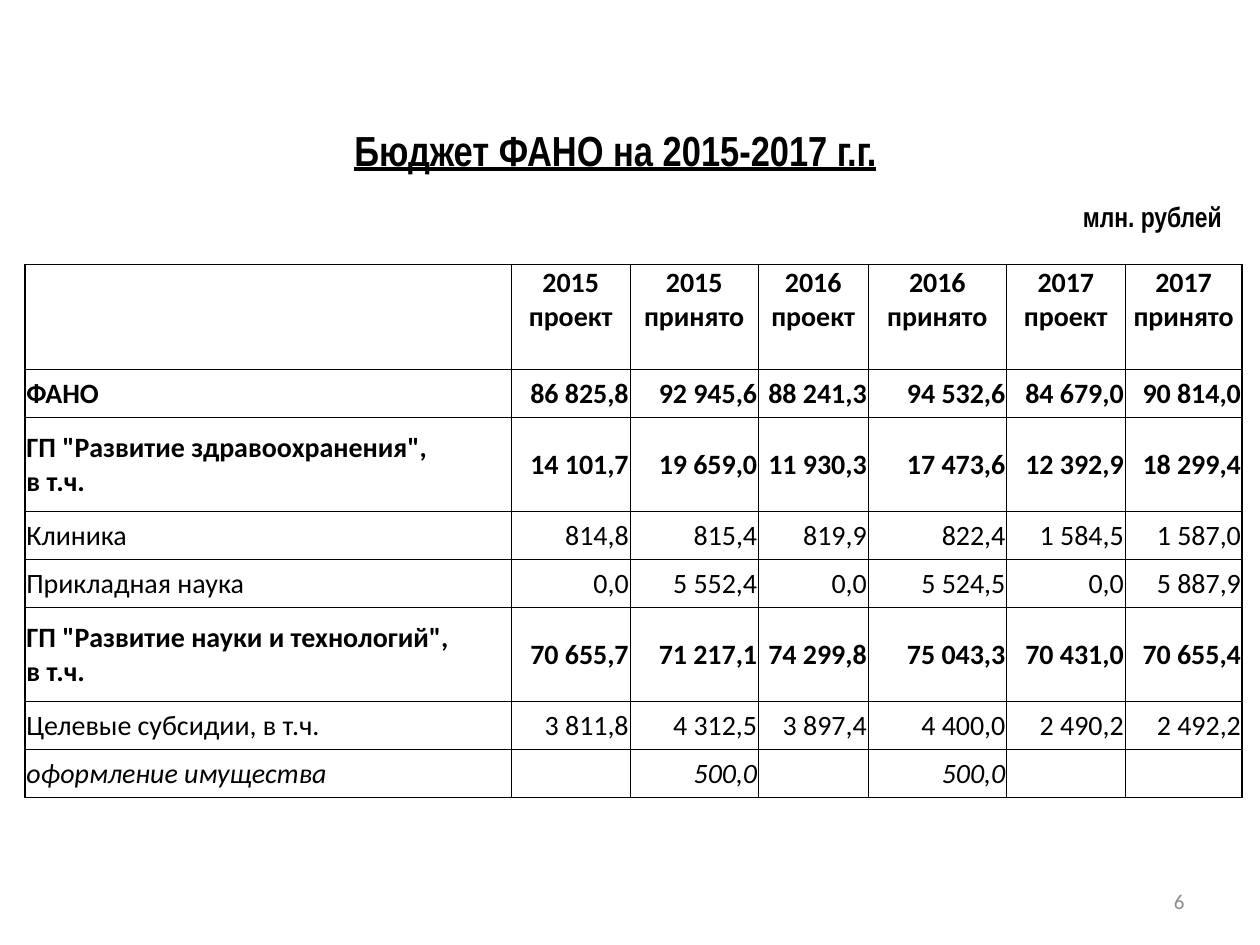
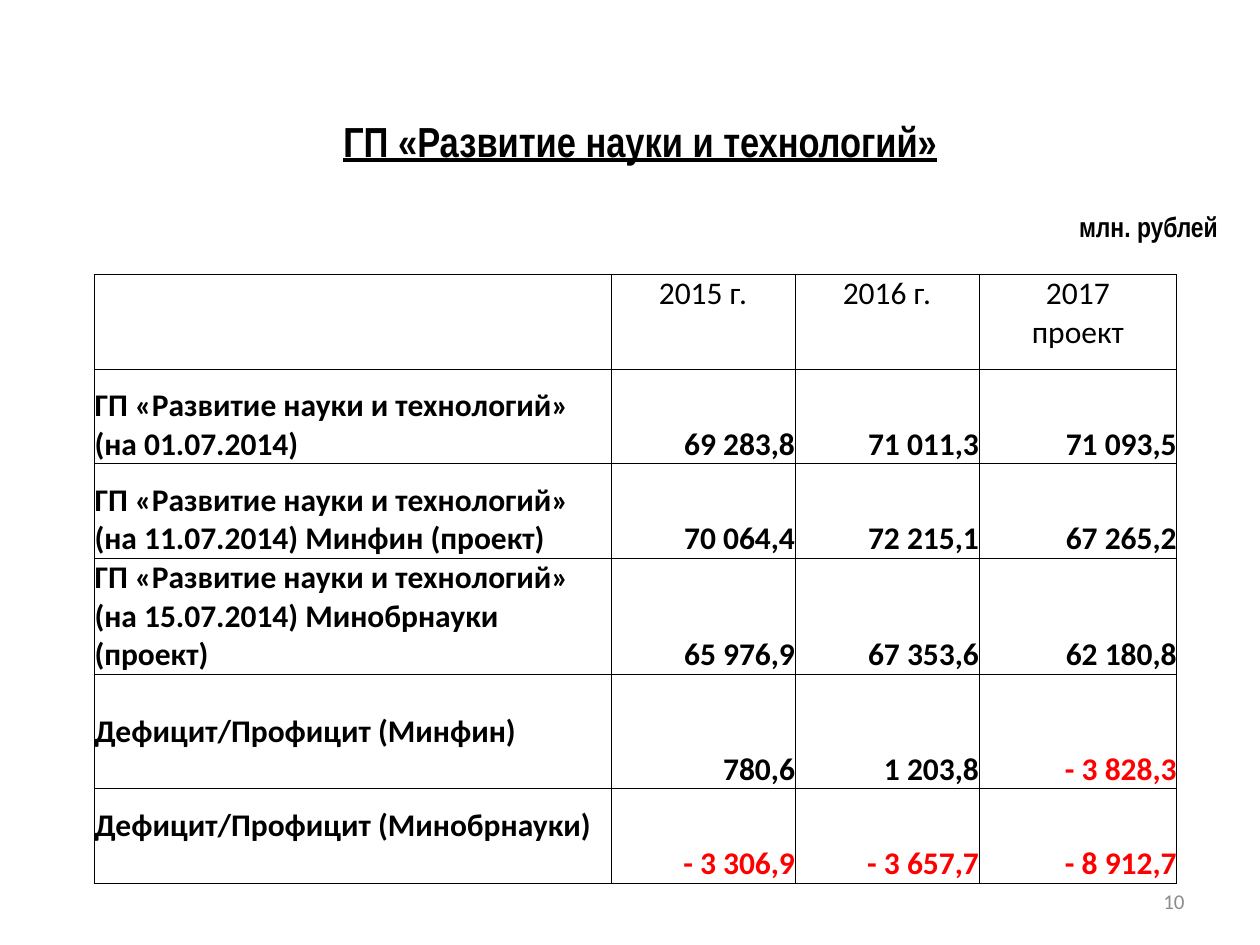
from dataclasses import dataclass

from lxml import etree
from pptx import Presentation
from pptx.dml.color import RGBColor
from pptx.enum.text import MSO_ANCHOR, MSO_AUTO_SIZE, PP_ALIGN
from pptx.oxml.ns import qn
from pptx.util import Emu, Inches, Pt

LEFT, CENTER, RIGHT, JUSTIFY = PP_ALIGN.LEFT, PP_ALIGN.CENTER, PP_ALIGN.RIGHT, PP_ALIGN.JUSTIFY
TOP, MIDDLE, BOTTOM = MSO_ANCHOR.TOP, MSO_ANCHOR.MIDDLE, MSO_ANCHOR.BOTTOM

SLIDE_W, SLIDE_H = Inches(10), Inches(7.5)
GRID_COLUMNS, GRID_ROWS = 100, 75
BLACK, RED, GRAY = "000000", "FF0000", "8C8C8C"
HEADING_FONT, BODY_FONT = "Arial Narrow", "Calibri"
HAIRLINE = 0.5


@dataclass(frozen=True)
class Frame:
    """A place on the slide, in grid columns and rows."""
    left: float
    top: float
    width: float
    height: float

    def emu(self) -> tuple[Emu, Emu, Emu, Emu]:
        return columns(self.left), rows(self.top), columns(self.width), rows(self.height)


@dataclass(frozen=True)
class Line:
    """One table row; label_lift raises the label above the row's bottom."""
    label: str
    figures: tuple[str, ...]
    height: float
    bold: bool = False
    italic: bool = False
    label_lift: float = 0


@dataclass(frozen=True)
class BudgetTable:
    left: float
    top: float
    column_widths: tuple[float, ...]
    lines: tuple[Line, ...]
    size: int
    margin: float
    label_align: PP_ALIGN
    anchor: MSO_ANCHOR
    outline: float


@dataclass(frozen=True)
class BudgetSlide:
    title: str
    title_frame: Frame
    unit_frame: Frame
    number: str
    table: BudgetTable


NUMBER_FRAME = Frame(71.7, 69.5, 23.3, 4)

AGENCY_BUDGET = BudgetSlide(
    "Бюджет ФАНО на 2015-2017 г.г.",
    Frame(13.8, 9.9, 70.1, 4.7),
    Frame(83.9, 15.5, 15.1, 3.8),
    "6",
    BudgetTable(
        2, 21, (38.6, 9.4, 10.2, 8.7, 11, 9.4, 9.3),
        (
            Line("", ("2015 проект", "2015 принято", "2016 проект", "2016 принято",
                      "2017 проект", "2017 принято"), 8.3, bold=True),
            Line("ФАНО", ("86 825,8", "92 945,6", "88 241,3", "94 532,6",
                          "84 679,0", "90 814,0"), 3.8, bold=True),
            Line('ГП "Развитие здравоохранения",\nв т.ч.',
                 ("14 101,7", "19 659,0", "11 930,3", "17 473,6", "12 392,9", "18 299,4"),
                 7.5, bold=True),
            Line("Клиника", ("814,8", "815,4", "819,9", "822,4", "1 584,5", "1 587,0"), 3.8),
            Line("Прикладная наука",
                 ("0,0", "5 552,4", "0,0", "5 524,5", "0,0", "5 887,9"), 3.8),
            Line('ГП "Развитие науки и технологий",\nв т.ч.',
                 ("70 655,7", "71 217,1", "74 299,8", "75 043,3", "70 431,0", "70 655,4"),
                 7.5, bold=True),
            Line("Целевые субсидии, в т.ч.",
                 ("3 811,8", "4 312,5", "3 897,4", "4 400,0", "2 490,2", "2 492,2"), 3.8),
            Line("оформление имущества", ("", "500,0", "", "500,0", "", ""), 3.8, italic=True),
        ),
        size=16, margin=0.1, label_align=JUSTIFY, anchor=MIDDLE, outline=1,
    ),
)

PROGRAMME_BUDGET = BudgetSlide(
    "ГП «Развитие науки и технологий»",
    Frame(1.6, 8.4, 98.4, 6.3),
    Frame(83.6, 16.3, 15.1, 3.8),
    "10",
    BudgetTable(
        7.5, 21.8, (41, 14.6, 14.6, 15.7),
        (
            Line("", ("2015 г.", "2016 г.", "2017\nпроект"), 7.5),
            Line("ГП «Развитие науки и технологий» (на 01.07.2014)",
                 ("69 283,8", "71 011,3", "71 093,5"), 7.5, bold=True),
            Line("ГП «Развитие науки и технологий» (на 11.07.2014) Минфин (проект)",
                 ("70 064,4", "72 215,1", "67 265,2"), 7.5, bold=True),
            Line("ГП «Развитие науки и технологий» (на 15.07.2014) Минобрнауки (проект)",
                 ("65 976,9", "67 353,6", "62 180,8"), 9.2, bold=True),
            Line("Дефицит/Профицит (Минфин)",
                 ("780,6", "1 203,8", "- 3 828,3"), 9.1, bold=True, label_lift=3),
            Line("Дефицит/Профицит (Минобрнауки)",
                 ("- 3 306,9", "- 3 657,7", "- 8 912,7"), 7.5, bold=True, label_lift=3),
        ),
        size=18, margin=0, label_align=LEFT, anchor=BOTTOM, outline=HAIRLINE,
    ),
)


def columns(count: float) -> Emu:
    return Emu(round(SLIDE_W * count / GRID_COLUMNS))


def rows(count: float) -> Emu:
    return Emu(round(SLIDE_H * count / GRID_ROWS))


def color(value: str) -> RGBColor:
    return RGBColor.from_string(value)


def write(text_frame, text: str, *, size: float, font: str = BODY_FONT, fill: str = BLACK,
          bold: bool = False, italic: bool = False, underline: bool = False,
          align: PP_ALIGN = LEFT, spacing: float = 1) -> None:
    text_frame.word_wrap = True
    for index, words in enumerate(text.split("\n")):
        paragraph = text_frame.add_paragraph() if index else text_frame.paragraphs[0]
        paragraph.alignment = align
        paragraph.line_spacing = spacing
        if not words:
            continue
        run = paragraph.add_run()
        run.text = words
        run.font.name, run.font.size = font, Pt(size)
        run.font.bold, run.font.italic, run.font.underline = bold, italic, underline
        run.font.color.rgb = color(fill)


def add_label(slide, frame: Frame, text: str, **text_format) -> None:
    text_frame = slide.shapes.add_textbox(*frame.emu()).text_frame
    text_frame.vertical_anchor = MIDDLE
    write(text_frame, text, **text_format)


def place_title(slide, frame: Frame, text: str) -> None:
    title = slide.shapes.title
    title.left, title.top, title.width, title.height = frame.emu()
    title.text_frame.auto_size = MSO_AUTO_SIZE.NONE
    title.text_frame.vertical_anchor = MIDDLE
    write(title.text_frame, text, size=24, font=HEADING_FONT, bold=True, underline=True,
          align=CENTER, spacing=0.8)


def set_borders(cell, widths: dict[str, float]) -> None:
    properties = cell._tc.get_or_add_tcPr()
    for side, width in widths.items():
        border = etree.SubElement(properties, qn(f"a:ln{side}"), w=str(Pt(width)))
        fill = etree.SubElement(border, qn("a:solidFill"))
        etree.SubElement(fill, qn("a:srgbClr"), val=BLACK)


def add_budget_table(slide, spec: BudgetTable) -> None:
    frame = Frame(spec.left, spec.top, sum(spec.column_widths),
                  sum(line.height for line in spec.lines))
    last_row, last_column = len(spec.lines) - 1, len(spec.column_widths) - 1
    table = slide.shapes.add_table(last_row + 1, last_column + 1, *frame.emu()).table
    table.first_row = table.horz_banding = False
    for column, width in zip(table.columns, spec.column_widths):
        column.width = columns(width)

    for r, line in enumerate(spec.lines):
        table.rows[r].height = rows(line.height)
        for c, text in enumerate((line.label, *line.figures)):
            cell = table.cell(r, c)
            cell.margin_left = cell.margin_right = columns(spec.margin)
            cell.margin_top = rows(spec.margin)
            cell.margin_bottom = rows(0 if c else line.label_lift)
            cell.vertical_anchor = spec.anchor if r else TOP
            on_edge = {"L": c == 0, "R": c == last_column, "T": r == 0, "B": r == last_row}
            set_borders(cell, {side: spec.outline if edge else HAIRLINE
                               for side, edge in on_edge.items()})
            cell.fill.background()
            figure_align = RIGHT if r else CENTER
            write(cell.text_frame, text, size=spec.size, bold=line.bold, italic=line.italic,
                  fill=RED if text.startswith("-") else BLACK,
                  align=figure_align if c else spec.label_align)


def add_budget_slide(deck, content: BudgetSlide) -> None:
    slide = deck.slides.add_slide(deck.slide_layouts.get_by_name("Title Only"))
    place_title(slide, content.title_frame, content.title)
    add_label(slide, content.unit_frame, "млн. рублей", size=16, font=HEADING_FONT,
              bold=True, align=CENTER, spacing=0.8)
    add_budget_table(slide, content.table)
    add_label(slide, NUMBER_FRAME, content.number, size=12, fill=GRAY, align=RIGHT)


def main() -> None:
    deck = Presentation()
    deck.slide_width, deck.slide_height = SLIDE_W, SLIDE_H
    for content in (AGENCY_BUDGET, PROGRAMME_BUDGET):
        add_budget_slide(deck, content)
    deck.save("out.pptx")


if __name__ == "__main__":
    main()
